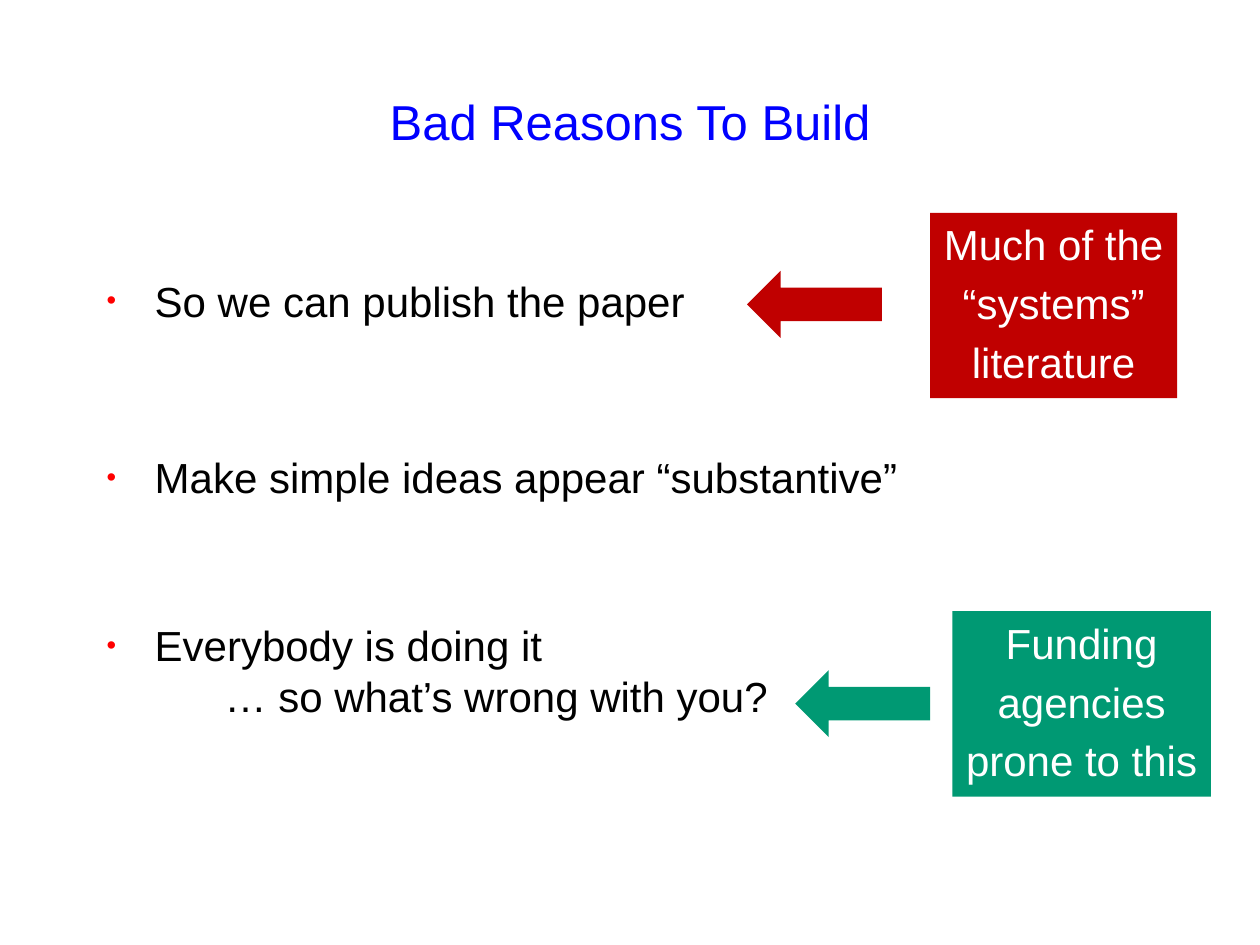
import pptx
import pptx.dml.color
import pptx.enum.shapes
import pptx.enum.text
import pptx.oxml
import pptx.oxml.ns
import pptx.util
from pptx.util import Cm

BLUE = pptx.dml.color.RGBColor(0x00, 0x00, 0xFF)
BLACK = pptx.dml.color.RGBColor(0x00, 0x00, 0x00)
WHITE = pptx.dml.color.RGBColor(0xFF, 0xFF, 0xFF)
RED = pptx.dml.color.RGBColor(0xC0, 0x00, 0x00)
GREEN = pptx.dml.color.RGBColor(0x00, 0x99, 0x73)
BULLET_RED = pptx.dml.color.RGBColor(0xFF, 0x00, 0x00)

CENTER = pptx.enum.text.PP_ALIGN.CENTER
ANCHORS = pptx.enum.text.MSO_ANCHOR
SHAPES = pptx.enum.shapes.MSO_SHAPE

HANGING = Cm(0.97)
CONTINUATION_INDENT = Cm(2.38)


def write_paragraphs(frame, lines, size, color, align=None, space_before=0):
    """Fill a text frame with one paragraph per line and return them."""
    frame.text = "\n".join(lines)
    for paragraph in frame.paragraphs:
        paragraph.font.name = "Arial"
        paragraph.font.size = pptx.util.Pt(size)
        paragraph.font.color.rgb = color
        paragraph.alignment = align
        paragraph.space_before = pptx.util.Pt(space_before)
    return frame.paragraphs


def add_bullet(paragraph):
    properties = paragraph._p.get_or_add_pPr()
    properties.set("marL", str(HANGING))
    properties.set("indent", str(-HANGING))
    namespace = pptx.oxml.ns.nsdecls("a")
    for xml in (
        f'<a:buClr {namespace}><a:srgbClr val="{BULLET_RED}"/></a:buClr>',
        f'<a:buSzPct {namespace} val="65000"/>',
        f'<a:buFont {namespace} typeface="Arial"/>',
        f'<a:buChar {namespace} char="•"/>',
    ):
        properties.append(pptx.oxml.parse_xml(xml))


def add_title(slide, title):
    frame = slide.shapes.add_textbox(Cm(1.9), Cm(0.85), Cm(21.6), Cm(3.18)).text_frame
    frame.word_wrap = True
    frame.vertical_anchor = ANCHORS.MIDDLE
    write_paragraphs(frame, [title], 28, BLUE, CENTER)


def add_reasons(slide, reasons):
    """Add bulleted reasons, given as (text, space before, continuation)."""
    frame = slide.shapes.add_textbox(Cm(1.9), Cm(5.42), Cm(21.6), Cm(11.51)).text_frame
    frame.word_wrap = True
    lines = [text for text, _, _ in reasons]
    paragraphs = write_paragraphs(frame, lines, 24, BLACK)
    for paragraph, (_, space_before, continuation) in zip(paragraphs, reasons):
        paragraph.space_before = pptx.util.Pt(space_before)
        if continuation:
            paragraph._p.get_or_add_pPr().set("marL", str(CONTINUATION_INDENT))
        else:
            add_bullet(paragraph)


def add_solid_shape(slide, kind, left, top, width, height, color):
    shape = slide.shapes.add_shape(kind, left, top, width, height)
    shape.shadow.inherit = False
    shape.fill.solid()
    shape.fill.fore_color.rgb = color
    shape.line.fill.background()
    return shape


def add_remark(slide, lines, left, top, width, color):
    remark = add_solid_shape(slide, SHAPES.RECTANGLE, left, top, width, Cm(3.74), color)
    frame = remark.text_frame
    frame.word_wrap = False
    frame.vertical_anchor = ANCHORS.TOP
    write_paragraphs(frame, lines, 24, WHITE, CENTER, space_before=4.8)


def add_arrow(slide, left, top, color):
    add_solid_shape(slide, SHAPES.LEFT_ARROW, left, top, Cm(2.72), Cm(1.35), color)


def main():
    presentation = pptx.Presentation()
    presentation.slide_width = Cm(25.4)
    presentation.slide_height = Cm(19.05)
    slide = presentation.slides.add_slide(presentation.slide_layouts[6])

    add_title(slide, "Bad Reasons To Build")
    add_reasons(slide, [
        ("So we can publish the paper", 0, False),
        ("Make simple ideas appear “substantive”", 72, False),
        ("Everybody is doing it", 67.5, False),
        ("… so what’s wrong with you?", 0, True),
    ])

    add_remark(slide, ["Much of the", "“systems”", "literature"],
               Cm(18.75), Cm(4.29), Cm(4.98), RED)
    add_arrow(slide, Cm(15.06), Cm(5.46), RED)
    add_remark(slide, ["Funding", "agencies", "prone to this"],
               Cm(19.2), Cm(12.32), Cm(5.21), GREEN)
    add_arrow(slide, Cm(16.03), Cm(13.51), GREEN)

    presentation.save("out.pptx")


if __name__ == "__main__":
    main()
